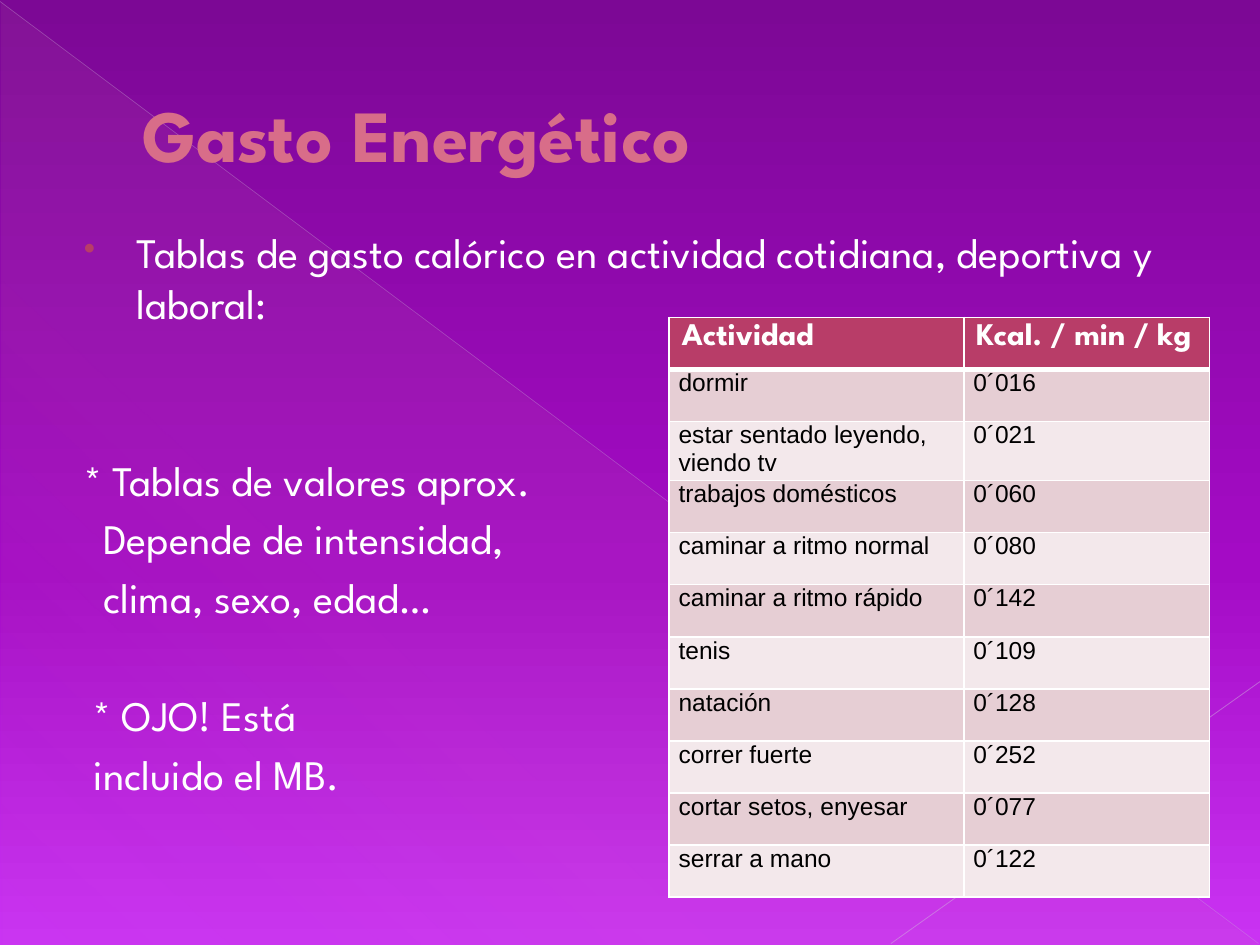
from typing import NamedTuple, Optional

import pptx
import pptx.dml.color
import pptx.enum.shapes
import pptx.enum.text
import pptx.oxml
import pptx.oxml.ns
import pptx.util
from pptx.util import Cm

COLORS = {
    "white": "FFFFFF", "black": "000000", "title": "D86D89", "accent": "B83D68",
    "band_dark": "E6CED4", "band_light": "F3E8EB", "veil": "D787A3",
    "diagonal": "CEAED9", "corner": "D3B7DD",
    "sky_top": "7C0895", "sky_mid": "A40BC5", "sky_low": "CA33F3",
}
HEADING_FONT = "League Spartan"
TABLE_FONT = "Arial"
NS = pptx.oxml.ns.nsdecls("a")


class Stop(NamedTuple):
    position: int
    color: str
    opacity: int = 100


class Ray(NamedTuple):
    start: tuple[float, float]
    end: tuple[float, float]
    color: str
    width: float
    opacity: int


class Line(NamedTuple):
    text: str
    margin: float
    hanging: float = 0
    before: float = 4.8
    bullet: Optional[str] = None


class Activity(NamedTuple):
    name: str
    rate: str


RAYS = [
    Ray((0, 0.03), (25.37, 19.02), "diagonal", 0.39, 35),
    Ray((25.4, 13.74), (17.96, 19.02), "corner", 0.47, 45),
]
# Larger space before a line opens a new group of notes
NOTES = [
    Line("Tablas de gasto calórico en actividad cotidiana, deportiva y laboral:",
         1.24, -1.07, bullet="•"),
    Line("* Tablas de valores aprox.", 0.18, before=72.2),
    Line("Depende de intensidad,", 0.56),
    Line("clima, sexo, edad…", 0.56),
    Line("* OJO! Está", 0.37, before=38.5),
    Line("incluido el MB.", 0.37),
]
HEADER = Activity("Actividad", "Kcal. / min / kg")
ACTIVITIES = [
    Activity("dormir", "0´016"),
    Activity("estar sentado leyendo, viendo tv", "0´021"),
    Activity("trabajos domésticos", "0´060"),
    Activity("caminar a ritmo normal", "0´080"),
    Activity("caminar a ritmo rápido", "0´142"),
    Activity("tenis", "0´109"),
    Activity("natación", "0´128"),
    Activity("correr fuerte", "0´252"),
    Activity("cortar setos, enyesar", "0´077"),
    Activity("serrar a mano", "0´122"),
]
COLUMN_WIDTHS = (5.94, 4.95)
ROW_HEIGHT = 1.05


def rgb(name: str) -> pptx.dml.color.RGBColor:
    return pptx.dml.color.RGBColor.from_string(COLORS[name])


def color_xml(name: str, opacity: int = 100) -> str:
    return f'<a:srgbClr val="{COLORS[name]}"><a:alpha val="{opacity * 1000}"/></a:srgbClr>'


def write(paragraph, text: str, *, size: float, font: str = HEADING_FONT,
          color: str = "white", bold: bool = False) -> None:
    run = paragraph.add_run()
    run.text = text
    run.font.size = pptx.util.Pt(size)
    run.font.name = font
    run.font.bold = bold
    run.font.color.rgb = rgb(color)


def set_gradient(fill, stops: list[Stop], clockwise: int) -> None:
    fill.gradient()
    fill.gradient_angle = 360 - clockwise
    stop_list = fill._fill._gradFill.gsLst
    for default_stop in list(stop_list):
        stop_list.remove(default_stop)
    for stop in stops:
        stop_list.append(pptx.oxml.parse_xml(
            f'<a:gs {NS} pos="{stop.position * 1000}">'
            f'{color_xml(stop.color, stop.opacity)}</a:gs>'))


def draw_ray(slide, ray: Ray) -> None:
    connector = slide.shapes.add_connector(
        pptx.enum.shapes.MSO_CONNECTOR.STRAIGHT,
        *(Cm(value) for value in ray.start + ray.end))
    connector.line.width = pptx.util.Pt(ray.width)
    connector.line.color.rgb = rgb(ray.color)
    line_color = connector.line._ln.find(".//" + pptx.oxml.ns.qn("a:srgbClr"))
    line_color.append(pptx.oxml.parse_xml(f'<a:alpha {NS} val="{ray.opacity * 1000}"/>'))
    connector._element.spPr.append(pptx.oxml.parse_xml(f"<a:effectLst {NS}/>"))


def add_text_frame(slide, left: float, top: float, width: float, height: float):
    frame = slide.shapes.add_textbox(Cm(left), Cm(top), Cm(width), Cm(height)).text_frame
    frame.word_wrap = True
    return frame


def set_indent(paragraph, margin: float, hanging: float = 0) -> None:
    properties = paragraph._p.get_or_add_pPr()
    properties.set("marL", str(Cm(margin)))
    properties.set("indent", str(Cm(hanging)))


def draw_notes(slide) -> None:
    frame = add_text_frame(slide, 1.27, 4.45, 23.14, 13.03)
    for index, line in enumerate(NOTES):
        paragraph = frame.add_paragraph() if index else frame.paragraphs[0]
        set_indent(paragraph, line.margin, line.hanging)
        paragraph.space_before = pptx.util.Pt(line.before)
        if line.bullet:
            for xml in (f'<a:buClr {NS}>{color_xml("accent")}</a:buClr>',
                        f'<a:buSzPct {NS} val="80000"/>',
                        f'<a:buChar {NS} char="{line.bullet}"/>'):
                paragraph._p.pPr.append(pptx.oxml.parse_xml(xml))
        write(paragraph, line.text, size=24)


def set_borders(cell, bottom: float = 1, top: float = 1) -> None:
    properties = cell._tc.get_or_add_tcPr()
    widths = {"lnL": 1, "lnR": 1, "lnT": top, "lnB": bottom}
    for index, (side, width) in enumerate(widths.items()):
        properties.insert(index, pptx.oxml.parse_xml(
            f'<a:{side} {NS} w="{pptx.util.Pt(width)}"><a:solidFill>'
            f'{color_xml("white")}</a:solidFill></a:{side}>'))


def draw_table(slide) -> None:
    rows = [HEADER, *ACTIVITIES]
    table = slide.shapes.add_table(
        len(rows), len(COLUMN_WIDTHS), Cm(13.49), Cm(6.4),
        Cm(sum(COLUMN_WIDTHS)), Cm(ROW_HEIGHT * len(rows))).table
    table.first_row = table.horz_banding = False
    for column, width in zip(table.columns, COLUMN_WIDTHS):
        column.width = Cm(width)
    for row_index, activity in enumerate(rows):
        is_header = row_index == 0
        band = "band_dark" if row_index % 2 else "band_light"
        for column_index, text in enumerate(activity):
            cell = table.cell(row_index, column_index)
            cell.fill.solid()
            cell.fill.fore_color.rgb = rgb("accent" if is_header else band)
            set_borders(cell, bottom=3 if is_header else 1, top=3 if row_index == 1 else 1)
            paragraph = cell.text_frame.paragraphs[0]
            if is_header:
                write(paragraph, text, size=18, bold=True)
            else:
                cell.margin_left = cell.margin_right = Cm(0.19)
                cell.margin_top = cell.margin_bottom = 0
                write(paragraph, text, size=14, font=TABLE_FONT, color="black")


def main() -> None:
    presentation = pptx.Presentation()
    presentation.slide_width, presentation.slide_height = Cm(25.4), Cm(19.05)
    slide = presentation.slides.add_slide(presentation.slide_layouts[6])

    # Background, veil and rays
    set_gradient(slide.background.fill,
                 [Stop(0, "sky_top"), Stop(60, "sky_mid"), Stop(100, "sky_low")], 90)
    veil = slide.shapes.add_shape(pptx.enum.shapes.MSO_SHAPE.RIGHT_TRIANGLE,
                                  Cm(0.03), Cm(0.05), Cm(25.35), Cm(19))
    veil.shadow.inherit = False
    veil.line.fill.background()
    set_gradient(veil.fill,
                 [Stop(0, "veil", 10), Stop(70, "veil", 8), Stop(100, "veil", 1)], 133)
    for ray in RAYS:
        draw_ray(slide, ray)

    # Title
    title = add_text_frame(slide, 1.27, 0.74, 22.86, 3.89)
    title.vertical_anchor = pptx.enum.text.MSO_ANCHOR.MIDDLE
    set_indent(title.paragraphs[0], 1.35)
    write(title.paragraphs[0], "Gasto Energético", size=42, color="title", bold=True)

    # Notes and energy table
    draw_notes(slide)
    draw_table(slide)
    presentation.save("out.pptx")


if __name__ == "__main__":
    main()
